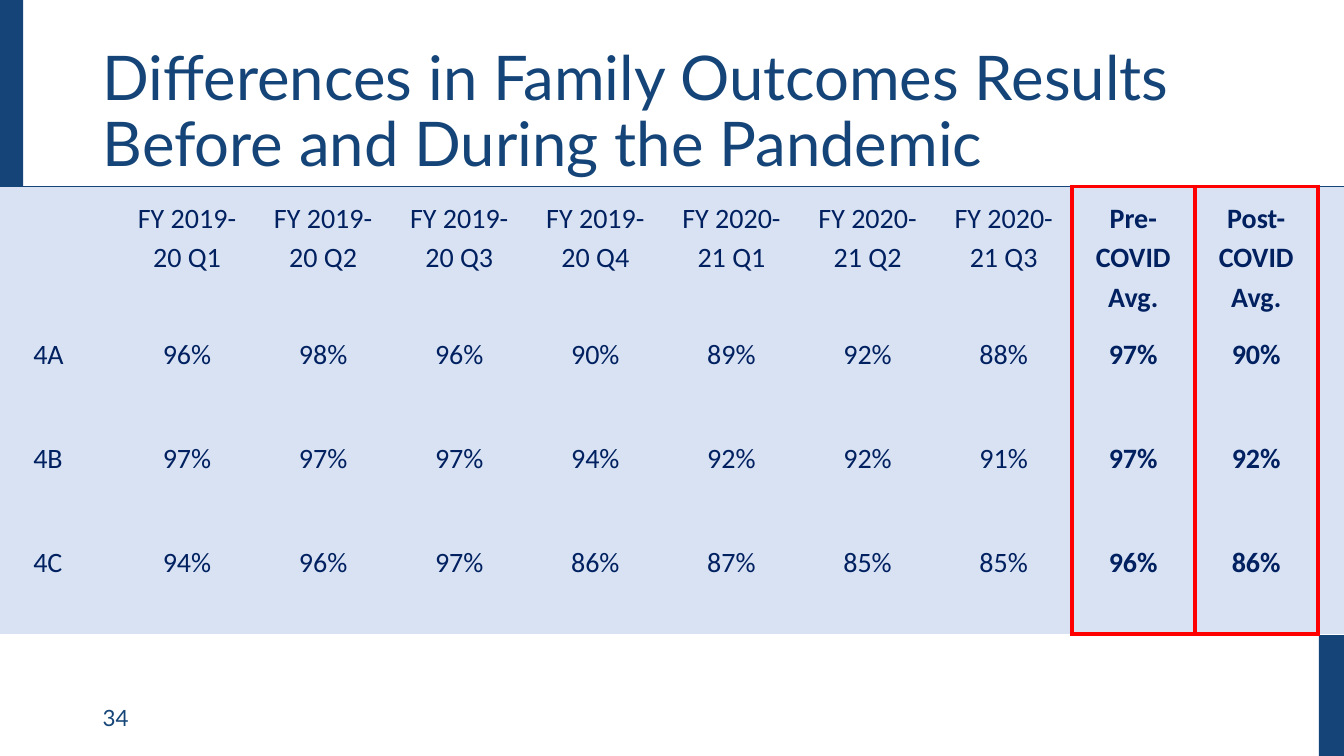
"""Build the slide comparing family outcomes before and during the pandemic."""
from lxml import etree
from pptx import Presentation
from pptx.dml.color import RGBColor
from pptx.enum.shapes import MSO_CONNECTOR, MSO_SHAPE
from pptx.enum.text import MSO_ANCHOR, PP_ALIGN
from pptx.oxml.ns import qn
from pptx.util import Inches, Pt

RECTANGLE, STRAIGHT = MSO_SHAPE.RECTANGLE, MSO_CONNECTOR.STRAIGHT
MIDDLE, LEFT, CENTER = MSO_ANCHOR.MIDDLE, PP_ALIGN.LEFT, PP_ALIGN.CENTER

COLORS = {"navy": "154578", "panel": "D8E2F3", "figures": "002060", "highlight": "FF0000"}
TITLE = "Differences in Family Outcomes Results Before and During the Pandemic"
PAGE_NUMBER = "34"
QUARTERS = ["FY 2019-20 Q1", "FY 2019-20 Q2", "FY 2019-20 Q3", "FY 2019-20 Q4",
            "FY 2020-21 Q1", "FY 2020-21 Q2", "FY 2020-21 Q3"]
AVERAGES = ["Pre- COVID Avg.", "Post- COVID Avg."]
OUTCOMES = {
    "4A": [96, 98, 96, 90, 89, 92, 88, 97, 90],
    "4B": [97, 97, 97, 94, 92, 92, 91, 97, 92],
    "4C": [94, 96, 97, 86, 87, 85, 85, 96, 86],
}

SLIDE_WIDTH, SLIDE_HEIGHT = 13.33, 7.5
EDGE, PANEL_TOP = -0.02, 1.85
BLOCKS = [
    (EDGE, PANEL_TOP, 13.35, 4.44, "panel"),
    (EDGE, 0, 0.25, PANEL_TOP, "navy"),
    (13.08, 6.3, 0.25, 1.2, "navy"),
]
LABELS = [
    (PAGE_NUMBER, (0.92, 6.92, 3, 0.4), 16, 1.0),
    (TITLE, (0.92, 0.4, 11.5, 1.45), 44, 0.9),
]
TABLE_PLACE = (0.23, PANEL_TOP, 12.86, 4.4)
COLUMN_WIDTHS = [0.95] + [1.35] * len(QUARTERS) + [1.22] * len(AVERAGES)
ROW_HEIGHTS = [1.31] + [1.03] * len(OUTCOMES)
CELL_FORMAT = dict.fromkeys(
    ("margin_left", "margin_top", "margin_right", "margin_bottom"), Inches(0.1))


def color(name):
    return RGBColor.from_string(COLORS[name])


def inches(*lengths):
    return [Inches(length) for length in lengths]


def write(frame, wording, align, spacing, **font_format):
    paragraph = frame.paragraphs[0]
    paragraph.alignment = align
    paragraph.line_spacing = spacing
    run = paragraph.add_run()
    run.text = wording
    run.font.color.rgb = color(font_format.pop("ink"))
    for attribute, value in font_format.items():
        setattr(run.font, attribute, value)


def set_borders(cell, highlighted):
    properties = cell._tc.get_or_add_tcPr()
    for position, (side, marked) in enumerate(highlighted.items()):
        border = etree.Element(qn(f"a:ln{side}"), w=str(Pt(3) if marked else 0))
        if marked:
            fill = etree.SubElement(border, qn("a:solidFill"))
            etree.SubElement(fill, qn("a:srgbClr"), val=COLORS["highlight"])
        else:
            etree.SubElement(border, qn("a:noFill"))
        properties.insert(position, border)


def add_backdrop(slide):
    for *place, tone in BLOCKS:
        block = slide.shapes.add_shape(RECTANGLE, *inches(*place))
        block.shadow.inherit = False
        block.fill.solid()
        block.fill.fore_color.rgb = color(tone)
        block.line.fill.background()
    rule = slide.shapes.add_connector(
        STRAIGHT, *inches(EDGE, PANEL_TOP, SLIDE_WIDTH, PANEL_TOP))
    rule.line.color.rgb = color("navy")
    rule.line.width = Pt(0.75)
    etree.SubElement(rule._element.spPr, qn("a:effectLst"))


def add_labels(slide):
    for wording, place, size, spacing in LABELS:
        frame = slide.shapes.add_textbox(*inches(*place)).text_frame
        frame.word_wrap = True
        frame.vertical_anchor = MIDDLE
        write(frame, wording, LEFT, spacing, size=Pt(size), name="Lato", ink="navy")


def add_outcomes(slide):
    rows = [["", *QUARTERS, *AVERAGES]]
    rows += [[outcome, *(f"{share}%" for share in shares)]
             for outcome, shares in OUTCOMES.items()]
    table = slide.shapes.add_table(
        len(rows), len(COLUMN_WIDTHS), *inches(*TABLE_PLACE)).table
    table.first_row = table.horz_banding = False
    for column, width in zip(table.columns, COLUMN_WIDTHS):
        column.width = Inches(width)
    for row, height in zip(table.rows, ROW_HEIGHTS):
        row.height = Inches(height)

    first_average = 1 + len(QUARTERS)
    for r, row in enumerate(rows):
        for c, wording in enumerate(row):
            cell = table.cell(r, c)
            is_average = c >= first_average
            cell.fill.background()
            for attribute, value in CELL_FORMAT.items():
                setattr(cell, attribute, value)
            set_borders(cell, {
                "L": is_average,
                "R": c >= first_average - 1,
                "T": is_average and r == 0,
                "B": is_average and r == len(rows) - 1,
            })
            if wording:
                write(cell.text_frame, wording, CENTER if c else LEFT, 1.15,
                      size=Pt(20), name="Calibri", bold=is_average, ink="figures")


def main():
    deck = Presentation()
    deck.slide_width, deck.slide_height = inches(SLIDE_WIDTH, SLIDE_HEIGHT)
    slide = deck.slides.add_slide(deck.slide_layouts[6])
    add_backdrop(slide)
    add_labels(slide)
    add_outcomes(slide)
    deck.save("out.pptx")


if __name__ == "__main__":
    main()
